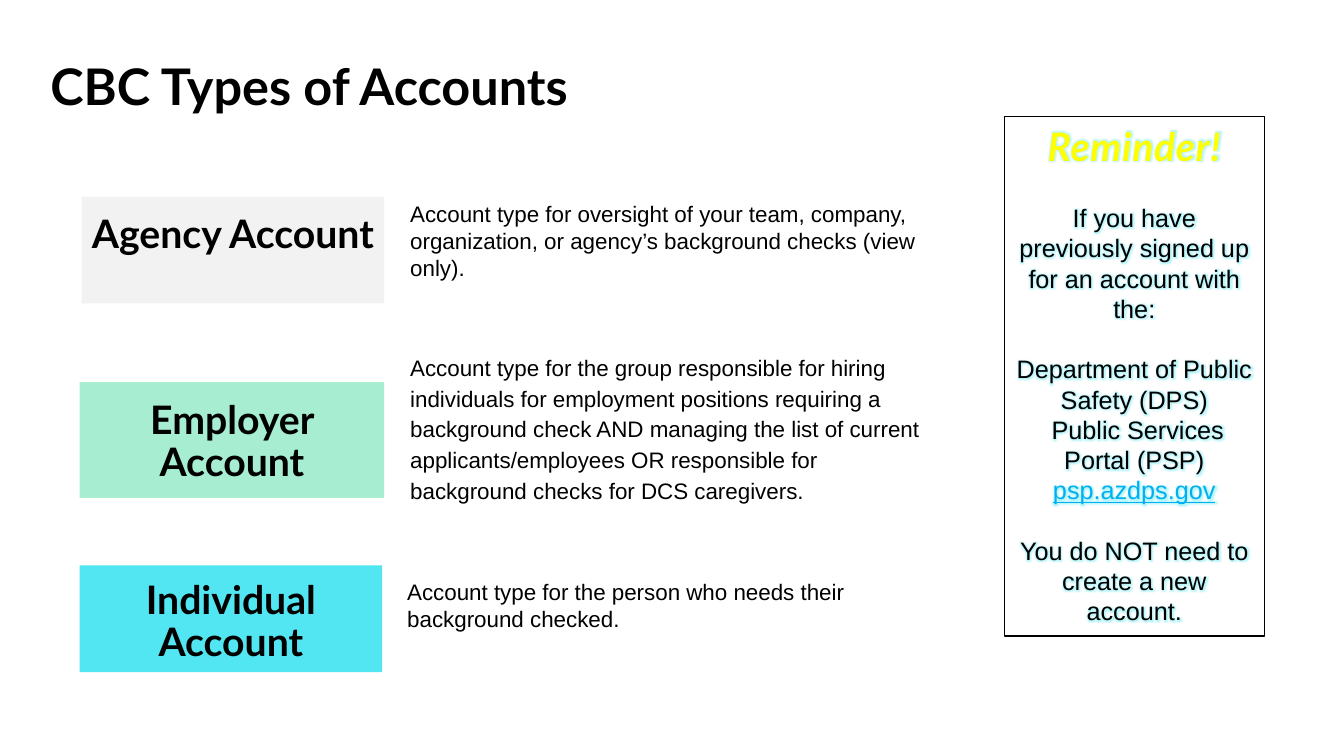
import pptx
import pptx.util
import pptx.dml.color
import pptx.enum.shapes
import pptx.enum.text
import pptx.oxml
import pptx.oxml.ns

Inches = pptx.util.Inches
Pt = pptx.util.Pt
ALIGN = pptx.enum.text.PP_ALIGN
ANCHOR = pptx.enum.text.MSO_ANCHOR
RECT = pptx.enum.shapes.MSO_SHAPE.RECTANGLE

HEADING = {"name": "Lato", "size": Pt(28), "bold": True}
BODY = {"name": "Arial", "size": Pt(16)}
NOTE = {"name": "Arial", "size": Pt(18)}

ACCOUNTS = [
    ("Agency Account", "F2F2F2", (0.81, 1.95, 3, 1.06), 0.18,
     "Account type for oversight of your team, company, organization, "
     "or agency’s background checks (view only).",
     (3.97, 1.94, 5.44, 0.91), 19.2),
    ("Employer Account", "A6EDD2", (0.79, 3.79, 3.02, 1.15), 0.18,
     "Account type for the group responsible for hiring individuals for "
     "employment positions requiring a background check AND managing the "
     "list of current applicants/employees OR responsible for background "
     "checks for DCS caregivers.",
     (3.97, 3.42, 5.44, 1.63), 22.08),
    ("Individual Account", "51E6F2", (0.79, 5.61, 3, 1.06), 0.15,
     "Account type for the person who needs their background checked.",
     (3.94, 5.69, 5.44, 0.64), 19.2),
]

REMINDERS = [
    ("If you have previously signed up for an account with the:", 24),
    ("Department of Public Safety (DPS)", 21.6),
    (" Public Services Portal (PSP)", 0),
    ("psp.azdps.gov", 0),
    ("You do NOT need to create a new account.", 21.6),
]


def rgb(value):
    return pptx.dml.color.RGBColor.from_string(value)


def apply(obj, values):
    for name, value in values.items():
        setattr(obj, name, value)


def frame(tf, left=0.1, top=0.05, right=0.1, bottom=0.05, anchor=ANCHOR.TOP):
    apply(tf, {
        "word_wrap": True,
        "auto_size": pptx.enum.text.MSO_AUTO_SIZE.NONE,
        "vertical_anchor": anchor,
        "margin_left": Inches(left),
        "margin_top": Inches(top),
        "margin_right": Inches(right),
        "margin_bottom": Inches(bottom),
    })


def write(p, text, font, color="000000", align=ALIGN.LEFT, spacing=0.9, before=0):
    apply(p, {"alignment": align, "line_spacing": spacing,
              "space_before": Pt(before)})
    r = p.add_run()
    r.text = text
    apply(r.font, font)
    r.font.color.rgb = rgb(color)
    return r


def add_rect(s, box, fill=None, line=None):
    sp = s.shapes.add_shape(RECT, *map(Inches, box))
    sp.shadow.inherit = False
    if fill:
        sp.fill.solid()
        sp.fill.fore_color.rgb = rgb(fill)
    else:
        sp.fill.background()
    if line:
        sp.line.color.rgb = rgb(line)
        sp.line.width = Pt(0.75)
    else:
        sp.line.fill.background()
    return sp


def add_glow(r):
    effect = pptx.oxml.parse_xml(
        f'<a:effectLst {pptx.oxml.ns.nsdecls("a")}>'
        '<a:glow rad="38100"><a:srgbClr val="51E6F2">'
        '<a:alpha val="40000"/></a:srgbClr></a:glow></a:effectLst>')
    r.font.fill._xPr.find(pptx.oxml.ns.qn("a:solidFill")).addnext(effect)


def add_title(s, box):
    sp = s.shapes.title
    apply(sp, dict(zip(("left", "top", "width", "height"), map(Inches, box))))
    frame(sp.text_frame, bottom=0, anchor=ANCHOR.BOTTOM)
    write(sp.text_frame.paragraphs[0], "CBC Types of Accounts",
          HEADING | {"size": Pt(36)})


def add_account(s, name, fill, label_box, inset, text, text_box, spacing):
    tf = add_rect(s, label_box, fill).text_frame
    frame(tf, left=0, top=inset, right=0)
    write(tf.paragraphs[0], name, HEADING, align=ALIGN.CENTER)
    tf = s.shapes.add_textbox(*map(Inches, text_box)).text_frame
    frame(tf)
    write(tf.paragraphs[0], text, BODY, spacing=Pt(spacing))


def add_reminder(s, box):
    tf = add_rect(s, box, line="000000").text_frame
    frame(tf)
    r = write(tf.paragraphs[0], "Reminder!", HEADING | {"italic": True},
              "FFFF00", ALIGN.CENTER, 1.0)
    r.font._element.set("spc", "50")
    add_glow(r)
    for text, before in REMINDERS:
        link = text.startswith("psp.")
        r = write(tf.add_paragraph(), text, NOTE | {"underline": link},
                  "00B0F0" if link else "000000", ALIGN.CENTER, Pt(21.6), before)
        add_glow(r)


def main():
    prs = pptx.Presentation()
    prs.slide_width = Inches(13.33)
    prs.slide_height = Inches(7.5)
    s = prs.slides.add_slide(prs.slide_layouts.get_by_name("Title Only"))
    add_title(s, (0.4, 0.43, 12.58, 0.73))
    for account in ACCOUNTS:
        add_account(s, *account)
    add_reminder(s, (9.96, 1.16, 2.58, 5.15))
    prs.save("out.pptx")


if __name__ == "__main__":
    main()
